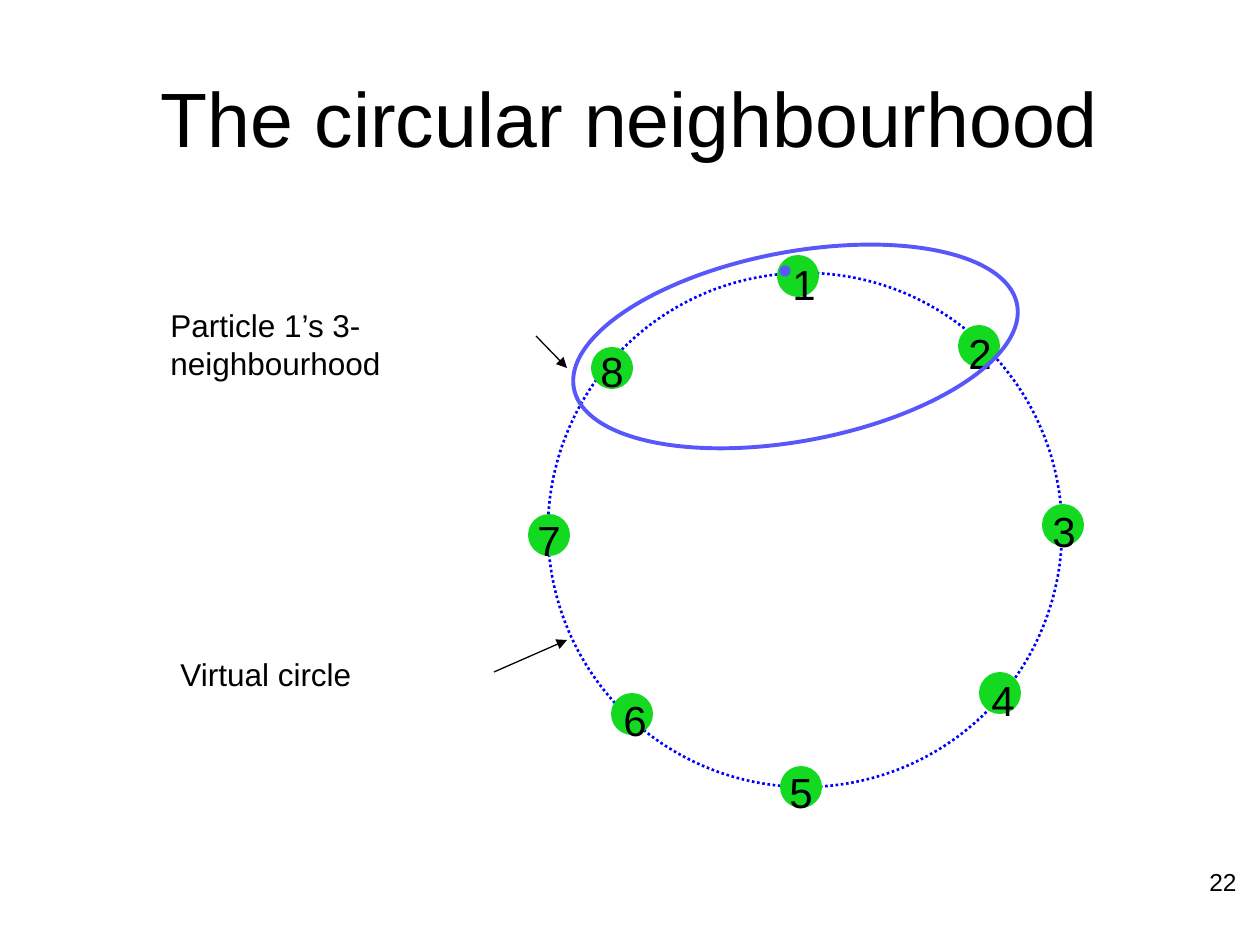
"""Build a slide showing the circular neighbourhood of eight particles."""
from typing import NamedTuple, Optional

from lxml import etree
from pptx import Presentation
from pptx.dml.color import RGBColor
from pptx.enum.dml import MSO_LINE
from pptx.enum.shapes import MSO_CONNECTOR, MSO_SHAPE
from pptx.enum.text import MSO_ANCHOR, PP_ALIGN
from pptx.oxml.ns import qn
from pptx.util import Pt

EMU_PER_PX = 914400 / 126
FONT = "Arial"
BLACK = RGBColor(0x00, 0x00, 0x00)
BLUE = RGBColor(0x00, 0x00, 0xFF)
VIOLET = RGBColor(0x58, 0x58, 0xFA)
GREEN = RGBColor(0x13, 0xD9, 0x21)
OVAL = MSO_SHAPE.OVAL
STRAIGHT = MSO_CONNECTOR.STRAIGHT
DOTTED = MSO_LINE.ROUND_DOT
TOP, MIDDLE = MSO_ANCHOR.TOP, MSO_ANCHOR.MIDDLE
LEFT, CENTER, RIGHT = PP_ALIGN.LEFT, PP_ALIGN.CENTER, PP_ALIGN.RIGHT
PARTICLE_SIZE = 42
NUMBER_HEIGHT = 63


class Box(NamedTuple):
    left: int
    top: int
    width: int
    height: int


class Particle(NamedTuple):
    left: int
    top: int
    number_left: int
    number_top: int
    number_width: int


class Label(NamedTuple):
    text: str
    box: Box
    size: int
    align: PP_ALIGN = LEFT
    anchor: MSO_ANCHOR = MIDDLE
    wrap: bool = True


class Arrow(NamedTuple):
    start_x: int
    start_y: int
    end_x: int
    end_y: int


PARTICLES = (
    Particle(777, 255, 780, 252, 40),
    Particle(958, 325, 956, 321, 48),
    Particle(1042, 504, 1040, 499, 45),
    Particle(979, 672, 979, 668, 43),
    Particle(780, 766, 777, 760, 44),
    Particle(611, 693, 611, 688, 43),
    Particle(528, 514, 525, 508, 44),
    Particle(591, 347, 588, 339, 45),
)
TITLE = Label("The circular neighbourhood", Box(63, 38, 1134, 158), 44, CENTER)
CIRCLE_LABEL = Label("Virtual circle", Box(168, 630, 318, 88), 18, wrap=False)
NEIGHBOURHOOD_LABEL = Label("Particle 1’s 3-neighbourhood", Box(158, 262, 388, 164), 18)
SLIDE_NUMBER = Label("22", Box(955, 861, 294, 66), 14, RIGHT, TOP)
ARROWS = (Arrow(494, 672, 567, 640), Arrow(536, 336, 567, 368))


def px(length: int) -> int:
    """Convert pixels to EMU."""
    return round(length * EMU_PER_PX)


def add_label(shapes, label: Label) -> None:
    """Add a text box holding a single run."""
    frame = shapes.add_textbox(*map(px, label.box)).text_frame
    frame.word_wrap = label.wrap
    frame.vertical_anchor = label.anchor
    paragraph = frame.paragraphs[0]
    paragraph.alignment = label.align
    run = paragraph.add_run()
    run.text = label.text
    run.font.name = FONT
    run.font.size = Pt(label.size)
    run.font.color.rgb = BLACK


def add_oval(shapes, box: Box, fill: Optional[RGBColor] = None,
             line: Optional[RGBColor] = None, line_width: float = 0.75):
    """Add an ellipse with an optional fill and outline."""
    shape = shapes.add_shape(OVAL, *map(px, box))
    shape.shadow.inherit = False
    if fill is None:
        shape.fill.background()
    else:
        shape.fill.solid()
        shape.fill.fore_color.rgb = fill
    if line is None:
        shape.line.fill.background()
    else:
        shape.line.color.rgb = line
        shape.line.width = Pt(line_width)
    return shape


def add_arrow(shapes, arrow: Arrow) -> None:
    """Add a straight line with a triangular head at its end."""
    connector = shapes.add_connector(STRAIGHT, *map(px, arrow))
    connector.line.color.rgb = BLACK
    connector.line.width = Pt(0.75)
    etree.SubElement(connector.line._get_or_add_ln(), qn("a:tailEnd"), type="triangle")
    etree.SubElement(connector._element.spPr, qn("a:effectLst"))


def add_diagram(shapes) -> None:
    """Add the virtual circle, its particles and the neighbourhood ring."""
    circle = add_oval(shapes, Box(548, 273, 514, 514), line=BLUE, line_width=1.5)
    circle.line.dash_style = DOTTED
    for particle in PARTICLES:
        box = Box(particle.left, particle.top, PARTICLE_SIZE, PARTICLE_SIZE)
        add_oval(shapes, box, fill=GREEN)
    for number, particle in enumerate(PARTICLES, start=1):
        box = Box(particle.number_left, particle.number_top,
                  particle.number_width, NUMBER_HEIGHT)
        add_label(shapes, Label(str(number), box, 24, wrap=False))
    ring = add_oval(shapes, Box(570, 252, 451, 189), line=VIOLET, line_width=2.25)
    ring.rotation = 349.3


def main() -> None:
    """Build and save the presentation."""
    presentation = Presentation()
    presentation.slide_width = px(1260)
    presentation.slide_height = px(945)
    slide = presentation.slides.add_slide(presentation.slide_layouts[6])
    shapes = slide.shapes
    add_label(shapes, TITLE)
    add_label(shapes, CIRCLE_LABEL)
    add_diagram(shapes.add_group_shape().shapes)
    add_label(shapes, NEIGHBOURHOOD_LABEL)
    for arrow in ARROWS:
        add_arrow(shapes, arrow)
    add_oval(shapes, Box(780, 266, 10, 10), fill=VIOLET, line=VIOLET)
    add_label(shapes, SLIDE_NUMBER)
    presentation.save("out.pptx")


if __name__ == "__main__":
    main()
